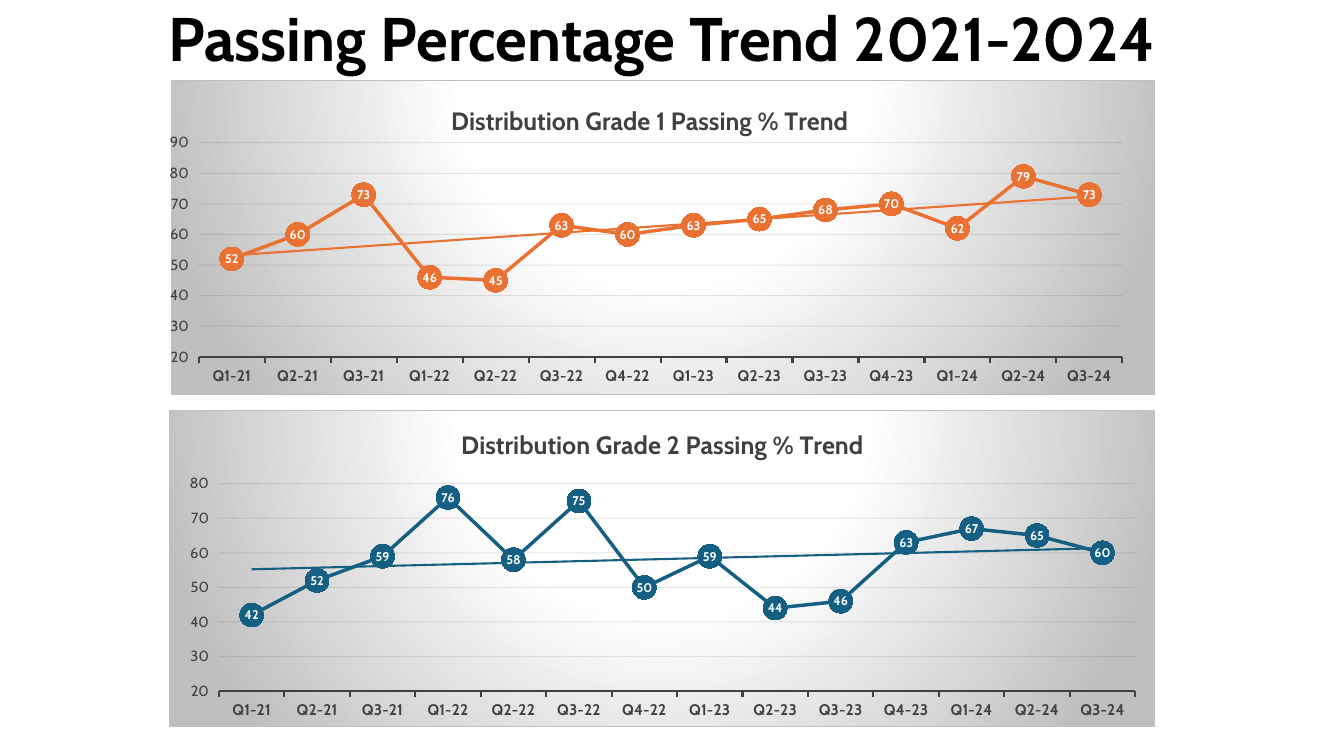
from dataclasses import dataclass

from lxml.etree import SubElement
from pptx import Presentation
from pptx.chart.data import CategoryChartData
from pptx.dml.color import RGBColor
from pptx.enum.chart import XL_CHART_TYPE as ChartType, XL_LABEL_POSITION as LabelPos
from pptx.enum.chart import XL_MARKER_STYLE as Marker, XL_TICK_MARK as Tick
from pptx.enum.text import MSO_ANCHOR as Anchor, PP_ALIGN as Align
from pptx.oxml import parse_xml
from pptx.oxml.ns import nsdecls, qn
from pptx.util import Inches, Pt

HEADING = "Passing Percentage Trend 2021-2024"
HEADING_BOX = (0.7, -0.31, 11.73, 1.1)
QUARTERS = ["Q1-21", "Q2-21", "Q3-21", "Q1-22", "Q2-22", "Q3-22", "Q4-22",
            "Q1-23", "Q2-23", "Q3-23", "Q4-23", "Q1-24", "Q2-24", "Q3-24"]
GRADES = [
    dict(title="Distribution Grade 1 Passing % Trend", color="E97132",
         box=(1.68, 0.79, 9.78, 3.13), top=90,
         passing=[52, 60, 73, 46, 45, 63, 60, 63, 65, 68, 70, 62, 79, 73],
         plot=dict(x=0.028, y=0.199, w=0.939, h=0.681),
         title_at=dict(x=0.28, y=0.06)),
    dict(title="Distribution Grade 2 Passing % Trend", color="156082",
         box=(1.68, 4.07, 9.78, 3.14), top=80,
         passing=[42, 52, 59, 76, 58, 75, 50, 59, 44, 46, 63, 67, 65, 60],
         plot=None, title_at=None),
]


@dataclass(frozen=True)
class Theme:
    face: str = "Cabin"
    ink: str = "000000"
    axis: str = "404040"
    grid: str = "0D0D0D"
    light: str = "FFFFFF"
    edge: str = "BFBFBF"
    heading: float = 44
    title: float = 18
    quarter: float = 11
    scale: float = 10.5
    label: float = 9
    base: float = 10


THEME = Theme()


def style(font, size, color, bold=False):
    for name, value in dict(name=THEME.face, size=Pt(size), bold=bold).items():
        setattr(font, name, value)
    font.color.rgb = RGBColor.from_string(color)


def stroke(line, color, width):
    line.color.rgb = RGBColor.from_string(color)
    line.width = Pt(width)


def manual_layout(places, inner=False):
    layout = parse_xml(f"<c:layout {nsdecls('c')}/>")
    manual = SubElement(layout, qn("c:manualLayout"))
    if inner:
        SubElement(manual, qn("c:layoutTarget")).set("val", "inner")
    for side in "xy":
        SubElement(manual, qn(f"c:{side}Mode")).set("val", "edge")
    for side, share in places.items():
        SubElement(manual, qn(f"c:{side}")).set("val", str(share))
    return layout


def replace_layout(parent, index, layout):
    for old in parent.findall(qn("c:layout")):
        parent.remove(old)
    parent.insert(index, layout)


def backdrop():
    stops = "".join(
        f'<a:gs pos="{share * 1000}"><a:srgbClr val="{color}"/></a:gs>'
        for share, color in [(0, THEME.light), (39, THEME.light), (100, THEME.edge)])
    return parse_xml(
        f'<c:spPr {nsdecls("c", "a")}><a:gradFill rotWithShape="1"><a:gsLst>{stops}</a:gsLst>'
        '<a:path path="circle"><a:fillToRect l="50000" t="-80000" r="50000" b="180000"/></a:path>'
        f'</a:gradFill><a:ln w="{Pt(0.75)}"><a:solidFill><a:srgbClr val="{THEME.edge}"/>'
        '</a:solidFill></a:ln></c:spPr>')


def trend(color):
    return parse_xml(
        f'<c:trendline {nsdecls("c", "a")}><c:spPr><a:ln w="{Pt(1.5)}"><a:solidFill>'
        f'<a:srgbClr val="{color}"/></a:solidFill></a:ln></c:spPr>'
        '<c:trendlineType val="linear"/><c:dispRSqr val="0"/><c:dispEq val="0"/></c:trendline>')


def style_axes(chart, top):
    quarters, scale = chart.category_axis, chart.value_axis
    for axis in (quarters, scale):
        axis.major_tick_mark = Tick.OUTSIDE
        axis.minor_tick_mark = Tick.NONE
    style(quarters.tick_labels.font, THEME.quarter, THEME.axis, True)
    style(scale.tick_labels.font, THEME.scale, THEME.axis)
    stroke(quarters.format.line, THEME.axis, 1.5)
    scale.format.line.fill.background()
    for name, value in dict(minimum_scale=20, maximum_scale=top, major_unit=10).items():
        setattr(scale, name, value)
    grid = scale.major_gridlines.format.line
    stroke(grid, THEME.grid, 0.75)
    for tint in scale.major_gridlines._xAx.iter(qn("a:srgbClr")):
        if tint.get("val") == THEME.grid:
            SubElement(tint, qn("a:alpha")).set("val", "10000")


def style_series(series, color):
    series.smooth = False
    stroke(series.format.line, color, 2.5)
    series.marker.style = Marker.CIRCLE
    series.marker.size = 17
    dot = series.marker.format
    dot.fill.solid()
    dot.fill.fore_color.rgb = RGBColor.from_string(color)
    dot.line.fill.background()
    labels = series.data_labels
    labels.show_value = True
    labels.position = LabelPos.CENTER
    style(labels.font, THEME.label, THEME.light, True)
    series._element.find(qn("c:cat")).addprevious(trend(color))


def add_grade(slide, grade):
    data = CategoryChartData(number_format="0")
    data.categories = QUARTERS
    data.add_series("Series 1", grade["passing"])
    box = [Inches(length) for length in grade["box"]]
    chart = slide.shapes.add_chart(ChartType.LINE_MARKERS, *box, data).chart
    style(chart.font, THEME.base, THEME.ink)
    chart.has_legend = False
    chart.has_title = True
    title = chart.chart_title
    title.text_frame.text = grade["title"]
    style(title.text_frame.paragraphs[0].runs[0].font, THEME.title, THEME.axis, True)
    title.include_in_layout = False
    style_axes(chart, grade["top"])
    chart.plots[0].vary_by_categories = False
    style_series(chart.plots[0].series[0], grade["color"])
    frame = chart._chartSpace.find(qn("c:chart"))
    frame.addnext(backdrop())
    if grade["plot"]:
        replace_layout(frame.find(qn("c:plotArea")), 0, manual_layout(grade["plot"], True))
        replace_layout(frame.find(qn("c:title")), 1, manual_layout(grade["title_at"]))


def add_heading(slide):
    frame = slide.shapes.add_textbox(*[Inches(n) for n in HEADING_BOX]).text_frame
    frame.word_wrap = True
    frame.vertical_anchor = Anchor.BOTTOM
    line = frame.paragraphs[0]
    line.text = HEADING
    line.alignment = Align.CENTER
    line.line_spacing = 0.9
    style(line.runs[0].font, THEME.heading, THEME.ink, True)


def main():
    deck = Presentation()
    deck.slide_width, deck.slide_height = Inches(13.33), Inches(7.5)
    slide = deck.slides.add_slide(deck.slide_layouts[6])
    add_heading(slide)
    for grade in GRADES:
        add_grade(slide, grade)
    deck.save("out.pptx")


if __name__ == "__main__":
    main()
